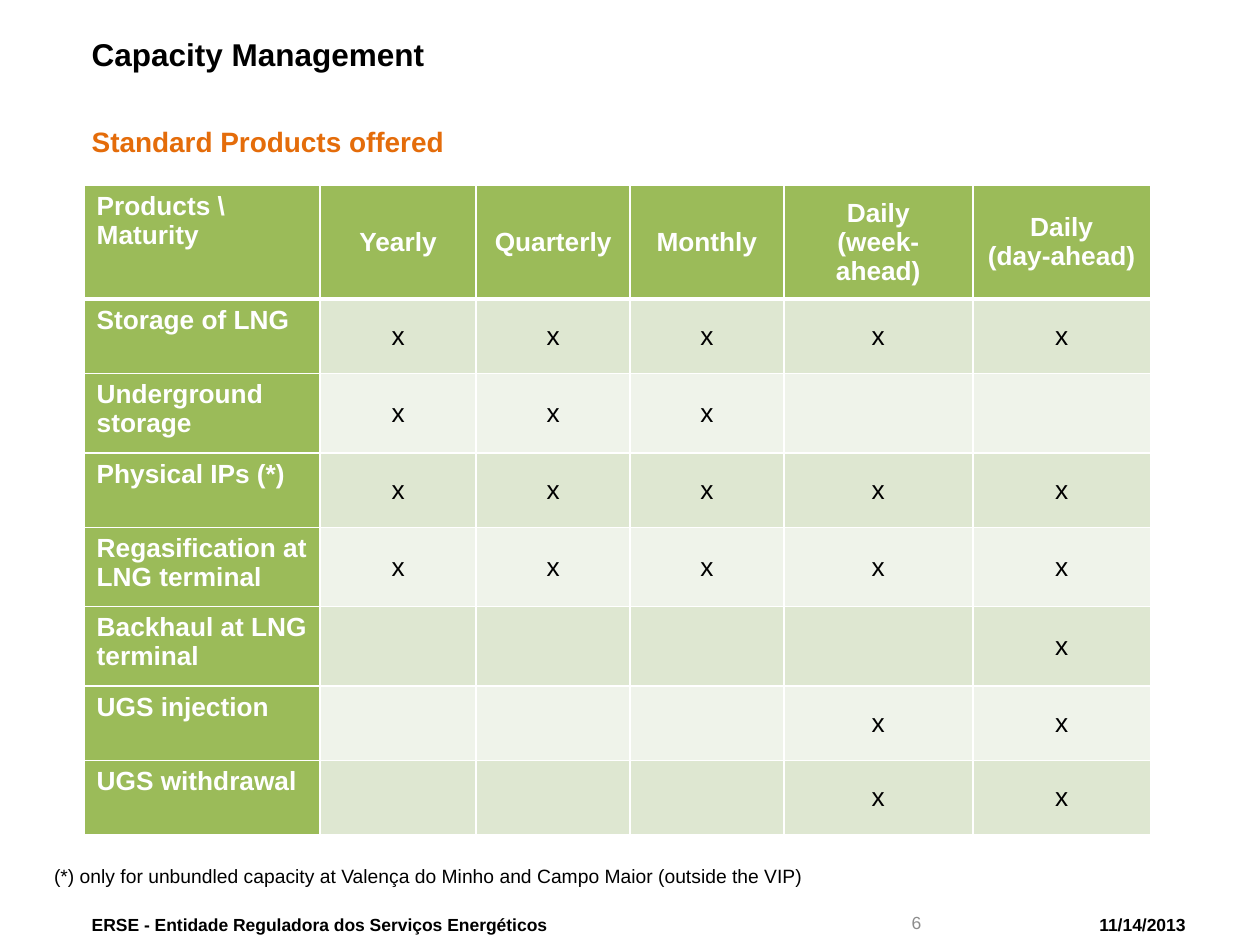
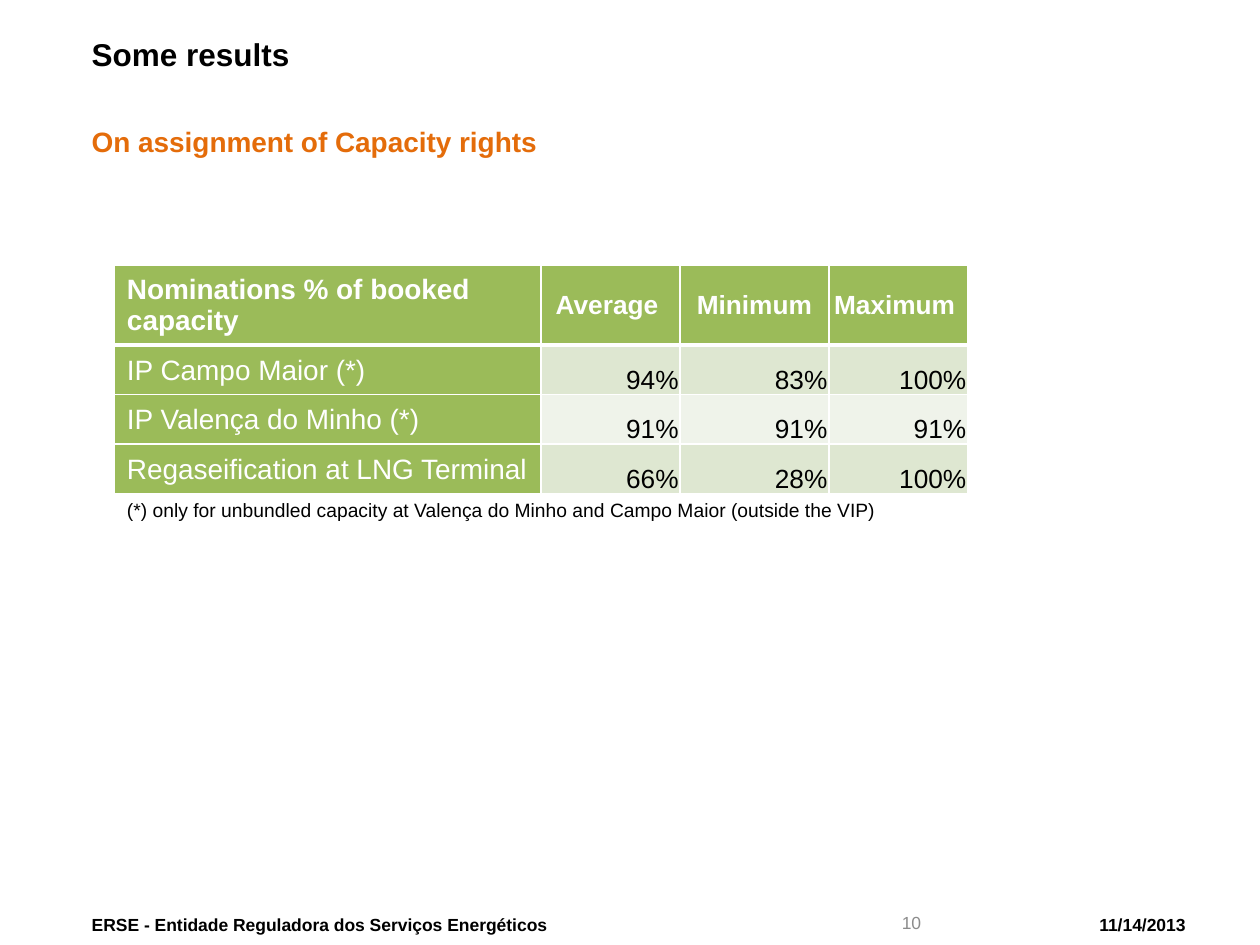
from dataclasses import dataclass
from lxml.etree import SubElement
from pptx import Presentation
from pptx.dml.color import RGBColor as RGB
from pptx.enum.text import MSO_ANCHOR as Anchor, PP_ALIGN as Align
from pptx.oxml import parse_xml
from pptx.oxml.ns import nsdecls
from pptx.util import Cm, Pt


@dataclass(frozen=True)
class Theme:
    font: str = "Arial"
    black: str = "000000"
    white: str = "FFFFFF"
    orange: str = "E46C0A"
    grey: str = "8C8C8C"
    green: str = "9BBB59"
    bands: tuple = ("DEE7D1", "EFF3EA")
    title: int = 18
    subtitle: int = 16
    label: int = 16
    cell: int = 15
    note: int = 11
    footer: int = 10
    line: int = 1
    head_line: int = 3


T = Theme()
FOOTER = "ERSE - Entidade Reguladora dos Serviços Energéticos"
DATE = "11/14/2013"
NOTE = "(*) only for unbundled capacity at Valença do Minho and Campo Maior (outside the VIP)"
WIDE = (0.25, 0.13, 0.25, 0.13)
TIGHT = (0.03, 0.03, 0.03, 0)
LABEL = (0.25, 0.03, 0.03, 0)

CAPACITY = {
    "at": (1.7, 3.73),
    "cols": (4.75, 3.15, 3.1, 3.1, 3.81, 3.58),
    "heights": (2.3, 1.5, 1.6, 1.5, 1.6, 1.6, 1.5, 1.5),
    "rows": [
        ("Products \\ Maturity", "Yearly", "Quarterly", "Monthly",
         "Daily\n(week-ahead)", "Daily\n(day-ahead)"),
        ("Storage of LNG", "x", "x", "x", "x", "x"),
        ("Underground storage", "x", "x", "x", "", ""),
        ("Physical IPs (*)", "x", "x", "x", "x", "x"),
        ("Regasification at LNG terminal", "x", "x", "x", "x", "x"),
        ("Backhaul at LNG terminal", "", "", "", "", "x"),
        ("UGS injection", "", "", "", "x", "x"),
        ("UGS withdrawal", "", "", "", "x", "x"),
    ],
    "corner": (T.cell, True, Align.LEFT, Anchor.TOP, WIDE),
    "head": (T.cell, True, Align.CENTER, Anchor.MIDDLE, WIDE),
    "label": (T.cell, True, Align.LEFT, Anchor.TOP, WIDE),
    "value": (T.cell, False, Align.CENTER, Anchor.MIDDLE, WIDE),
}
NOMINATIONS = {
    "at": (2.31, 5.34),
    "cols": (8.6, 2.8, 3.0, 2.8),
    "heights": (1.5, 1.0, 1.0, 1.0),
    "rows": [
        ("Nominations % of booked capacity", "Average ", "Minimum", "Maximum "),
        ("IP Campo Maior (*)", "94%", "83%", "100%"),
        ("IP Valença do Minho (*)", "91%", "91%", "91%"),
        ("Regaseification at LNG Terminal", "66%", "28%", "100%"),
    ],
    "corner": (T.label, True, Align.LEFT, Anchor.MIDDLE, WIDE),
    "head": (T.cell, True, Align.CENTER, Anchor.MIDDLE, TIGHT),
    "label": (T.label, False, Align.LEFT, Anchor.MIDDLE, LABEL),
    "value": (T.cell, False, Align.RIGHT, Anchor.BOTTOM, TIGHT),
}
SLIDES = [
    ("Capacity Management", "Standard Products offered", "6", CAPACITY, (0.84, 17.3)),
    ("Some results", "On assignment of Capacity rights", "10", NOMINATIONS, (2.31, 9.93)),
]


def write(tf, text, size, color, bold, align):
    tf.text = text
    for p in tf.paragraphs:
        p.alignment = align
        f = p.font
        f.name, f.size, f.bold = T.font, Pt(size), bold
        f.color.rgb = RGB.from_string(color)


def add_text(s, text, box, size, color=T.black, bold=True, align=Align.LEFT, anchor=Anchor.TOP):
    tf = s.shapes.add_textbox(*map(Cm, box)).text_frame
    tf.word_wrap = True
    tf.vertical_anchor = anchor
    write(tf, text, size, color, bold, align)


def set_borders(cell, row):
    widths = {"L": T.line, "R": T.line,
              "T": T.head_line if row == 1 else T.line,
              "B": T.head_line if row == 0 else T.line}
    tc_pr = cell._tc.get_or_add_tcPr()
    for i, (side, width) in enumerate(widths.items()):
        ln = parse_xml(f'<a:ln{side} {nsdecls("a")} w="{Pt(width)}"><a:solidFill>'
                       f'<a:srgbClr val="{T.white}"/></a:solidFill></a:ln{side}>')
        tc_pr.insert(i, ln)


def add_grid(s, data):
    rows, cols, heights = data["rows"], data["cols"], data["heights"]
    table = s.shapes.add_table(len(rows), len(cols), *map(Cm, data["at"]),
                               Cm(sum(cols)), Cm(sum(heights))).table
    for column, width in zip(table.columns, cols):
        column.width = Cm(width)
    for i, (row, values) in enumerate(zip(table.rows, rows)):
        row.height = Cm(heights[i])
        for j, (cell, text) in enumerate(zip(row.cells, values)):
            edge = i == 0 or j == 0
            kind = ("label" if i else "corner") if j == 0 else ("value" if i else "head")
            size, bold, align, anchor, insets = data[kind]
            (cell.margin_left, cell.margin_top,
             cell.margin_right, cell.margin_bottom) = map(Cm, insets)
            cell.vertical_anchor = anchor
            cell.fill.solid()
            cell.fill.fore_color.rgb = RGB.from_string(T.green if edge else T.bands[(i - 1) % 2])
            set_borders(cell, i)
            write(cell.text_frame, text, size, T.white if edge else T.black, bold, align)


def add_frame(s, title, subtitle, number):
    add_text(s, title, (1.6, 0.58, 17.6, 1.6), T.title)
    add_text(s, subtitle, (1.6, 2.39, 22.43, 0.79), T.subtitle, T.orange)
    add_text(s, DATE, (21.74, 18.39, 2.41, 0.51), T.footer,
             align=Align.RIGHT, anchor=Anchor.MIDDLE)
    add_text(s, FOOTER, (1.6, 18.39, 9.7, 0.51), T.footer, anchor=Anchor.MIDDLE)
    add_text(s, number, (16.66, 18.34, 2.16, 0.51), T.footer, T.grey, False,
             Align.RIGHT, Anchor.MIDDLE)


def main():
    prs = Presentation()
    prs.slide_width, prs.slide_height = Cm(25.4), Cm(19.05)
    for title, subtitle, number, data, note_at in SLIDES:
        s = prs.slides.add_slide(prs.slide_layouts[6])
        add_frame(s, title, subtitle, number)
        add_grid(s, data)
        add_text(s, NOTE, (*note_at, 15.9, 0.71), T.note, bold=False)
    prs.save("out.pptx")


if __name__ == "__main__":
    main()
